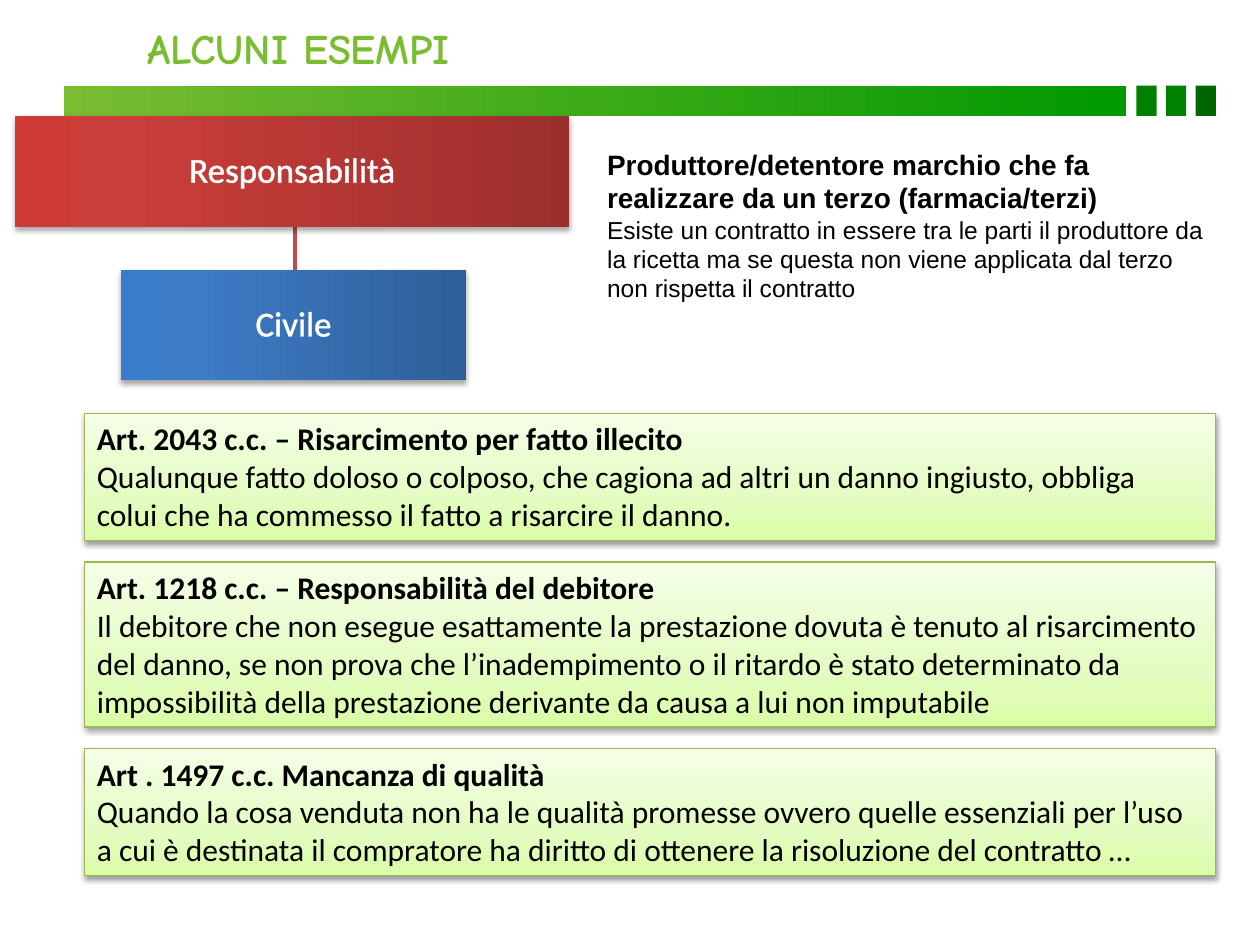
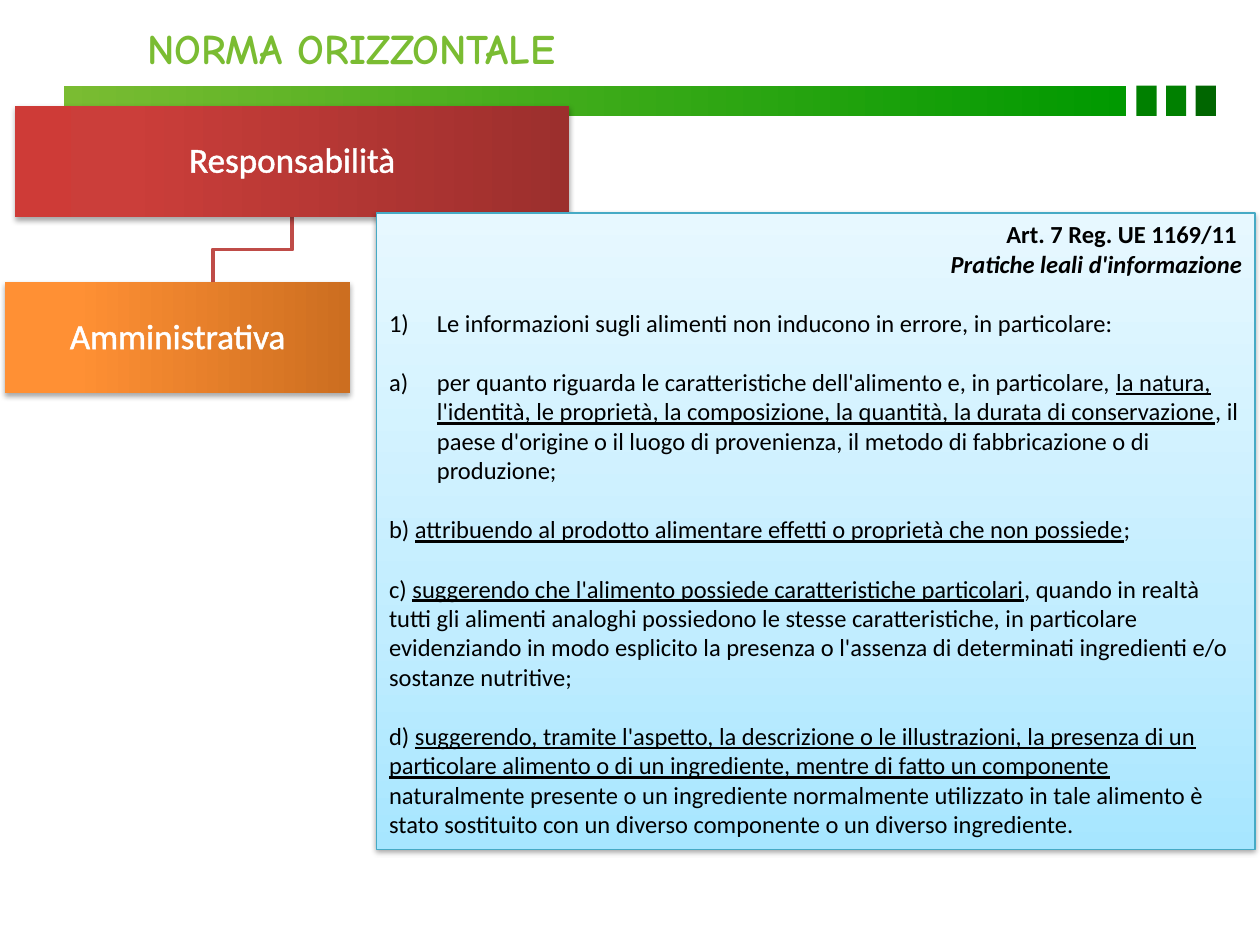
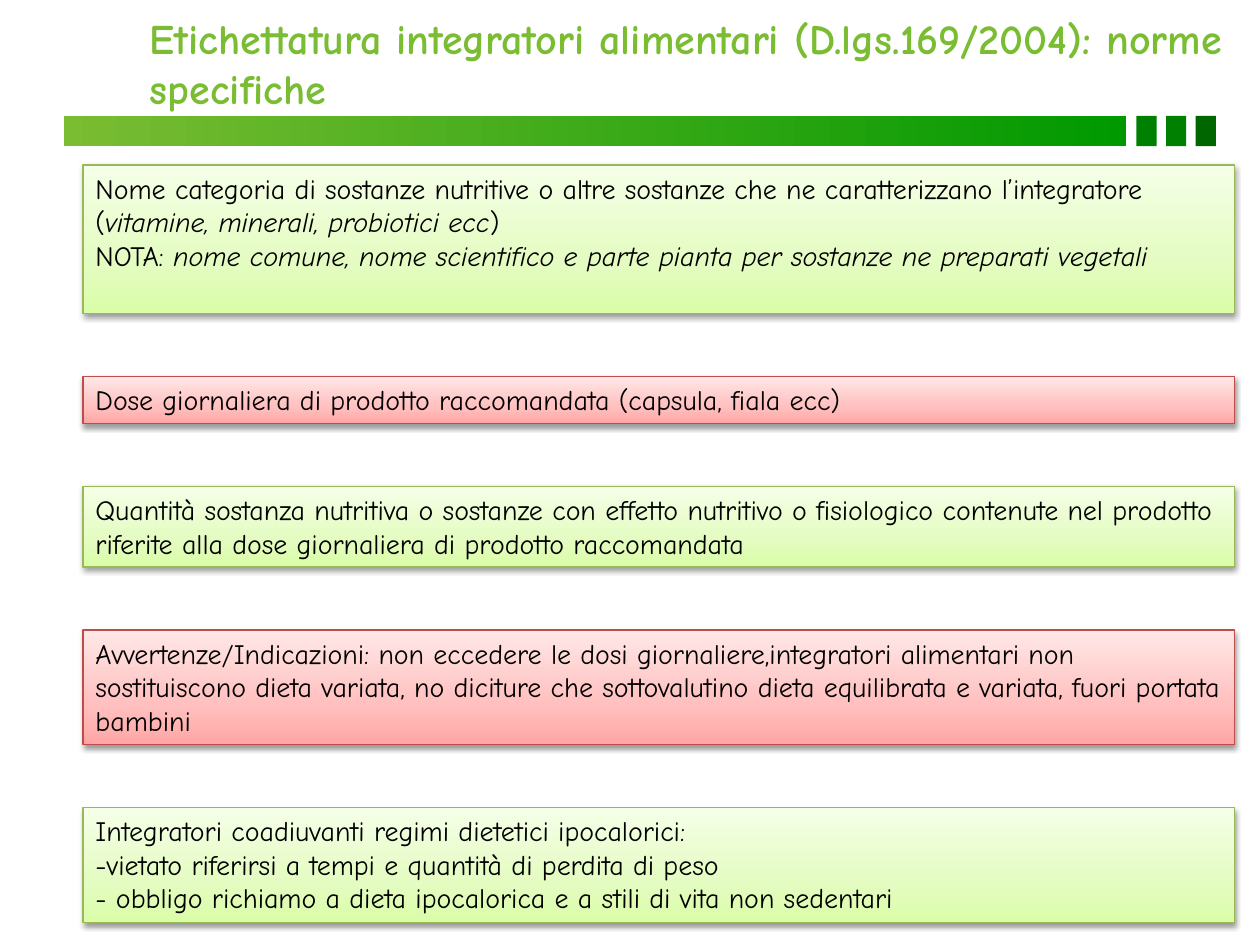
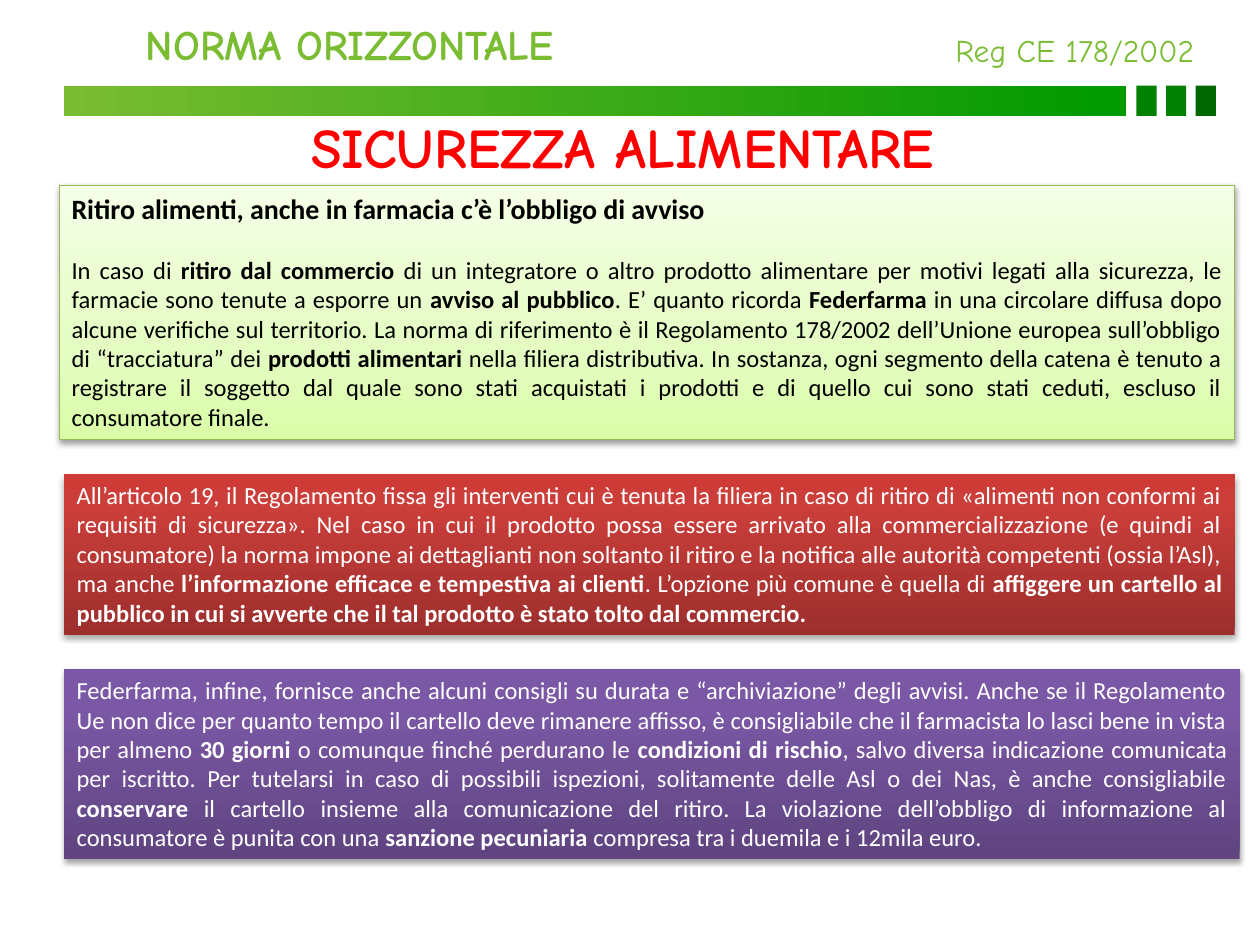
"""Builds four slides on food law: liability, fair information, supplement labels and food safety."""
from dataclasses import dataclass

from lxml.etree import SubElement
from pptx import Presentation
from pptx.dml.color import RGBColor
from pptx.enum.shapes import MSO_CONNECTOR, MSO_SHAPE
from pptx.enum.text import MSO_ANCHOR, MSO_AUTO_SIZE, PP_ALIGN
from pptx.oxml.ns import qn
from pptx.util import Inches, Pt

LIME = RGBColor(0x7A, 0xBC, 0x32)
GREEN = RGBColor(0x00, 0x99, 0x00)
MID_GREEN = RGBColor(0x00, 0x80, 0x00)
DARK_GREEN = RGBColor(0x00, 0x66, 0x00)
OLIVE = RGBColor(0x98, 0xB9, 0x55)
BRICK = RGBColor(0xBF, 0x4C, 0x48)
TEAL = RGBColor(0x46, 0xAA, 0xC5)
RED = RGBColor(0xFF, 0x00, 0x00)
BLACK = RGBColor(0x00, 0x00, 0x00)
WHITE = RGBColor(0xFF, 0xFF, 0xFF)

COMIC, CALIBRI, ARIAL = "Comic Neue", "Calibri", "Arial"
UPWARD, LEFTWARD, RIGHTWARD = 90, 180, 0
BLANK_LINE = 17
MARKS = {"*": "bold", "~": "italic", "_": "underline"}


@dataclass
class Theme:
    """Fill stops, outline, text colour and shadow of a panel."""
    stops: tuple
    line: RGBColor = None
    text: RGBColor = WHITE
    shadow_alpha: int = 35
    shadow_distance: float = 1.8


def pale(stops, line):
    return Theme(stops, line, BLACK, 38, 1.6)


PALE_GREEN = pale(((0, "DAFDA7"), (35, "E4FCC2"), (100, "F5FFE7")), OLIVE)
PALE_RED = pale(((0, "FFA6A5"), (35, "FFC0BF"), (100, "FFE7E7")), BRICK)
PALE_BLUE = pale(((0, "A7E6FF"), (35, "C1EDFF"), (100, "E7F8FF")), TEAL)
DEEP_RED = Theme(((0, "9C2F2D"), (80, "CB3E3A"), (100, "CE3B37")))
DEEP_BLUE = Theme(((0, "2F5F99"), (80, "3D7CC7"), (100, "3A7CCB")))
DEEP_ORANGE = Theme(((0, "CC6E20"), (80, "FF9034"), (100, "FF9136")))
DEEP_PURPLE = Theme(((0, "5F4480"), (80, "7B58A6"), (100, "7C57A8")))


@dataclass
class Para:
    """One paragraph; * marks bold, ~ italic and _ underlined words."""
    text: str
    size: float
    align: PP_ALIGN = PP_ALIGN.LEFT
    gap: float = 0
    numbering: str = None


LIABILITY_ARTICLES = [
    (1.01, "Art. 2043 c.c. – Risarcimento per fatto illecito",
     "Qualunque fatto doloso o colposo, che cagiona ad altri un danno ingiusto, obbliga colui che ha "
     "commesso il fatto a risarcire il danno."),
    (1.31, "Art. 1218 c.c. – Responsabilità del debitore",
     "Il debitore che non esegue esattamente la prestazione dovuta è tenuto al risarcimento del danno, "
     "se non prova che l’inadempimento o il ritardo è stato determinato da impossibilità della "
     "prestazione derivante da causa a lui non imputabile"),
    (1.01, "Art . 1497 c.c. Mancanza di qualità",
     "Quando la cosa venduta non ha le qualità promesse ovvero quelle essenziali per l’uso a cui è "
     "destinata il compratore ha diritto di ottenere la risoluzione del contratto …"),
]

PRODUCER_CASE = [
    Para("*Produttore/detentore marchio che fa realizzare da un terzo (farmacia/terzi)*", 16),
    Para("Esiste un contratto in essere tra le parti il produttore da la ricetta ma se questa non viene "
         "applicata dal terzo non rispetta il contratto", 14),
]

FAIR_INFORMATION = [
    Para("*Art. 7 Reg. UE 1169/11 *", 14, PP_ALIGN.RIGHT),
    Para("*~Pratiche leali d'informazione~*", 14, PP_ALIGN.RIGHT),
    Para("Le informazioni sugli alimenti non inducono in errore, in particolare:", 14,
         gap=BLANK_LINE, numbering="arabicParenR"),
    Para("per quanto riguarda le caratteristiche dell'alimento e, in particolare, _la natura, "
         "l'identità, le proprietà, la composizione, la quantità, la durata di conservazione_, il paese "
         "d'origine o il luogo di provenienza, il metodo di fabbricazione o di produzione;", 14,
         gap=BLANK_LINE, numbering="alphaLcParenR"),
    Para("b) _attribuendo al prodotto alimentare effetti o proprietà che non possiede_;", 14,
         gap=BLANK_LINE),
    Para("c) _suggerendo che l'alimento possiede caratteristiche particolari_, quando in realtà tutti "
         "gli alimenti analoghi possiedono le stesse caratteristiche, in particolare evidenziando in "
         "modo esplicito la presenza o l'assenza di determinati ingredienti e/o sostanze nutritive;", 14,
         gap=BLANK_LINE),
    Para("d) _suggerendo, tramite l'aspetto, la descrizione o le illustrazioni, la presenza di un "
         "particolare alimento o di un ingrediente, mentre di fatto un componente _naturalmente "
         "presente o un ingrediente normalmente utilizzato in tale alimento è stato sostituito con un "
         "diverso componente o un diverso ingrediente.", 14, gap=BLANK_LINE),
]

LABEL_RULES = [
    (PALE_GREEN, 1.18, [
        "Nome categoria di sostanze nutritive o altre sostanze che ne caratterizzano l’integratore "
        "(~vitamine, minerali, probiotici ecc~)",
        "NOTA: ~nome comune, nome scientifico e parte pianta per sostanze ne preparati vegetali~"]),
    (PALE_RED, 0.37, ["Dose giornaliera di prodotto raccomandata (capsula, fiala ecc)"]),
    (PALE_GREEN, 0.64, [
        "Quantità sostanza nutritiva o sostanze con effetto nutritivo o fisiologico contenute nel "
        "prodotto riferite alla dose giornaliera di prodotto raccomandata"]),
    (PALE_RED, 0.91, [
        "Avvertenze/Indicazioni: non eccedere le dosi giornaliere,integratori alimentari non "
        "sostituiscono dieta variata, no diciture che sottovalutino dieta equilibrata e variata, fuori "
        "portata bambini"]),
    (PALE_GREEN, 0.91, [
        "Integratori coadiuvanti regimi dietetici ipocalorici:",
        "-vietato riferirsi a tempi e quantità di perdita di peso",
        "- obbligo richiamo a dieta ipocalorica e a stili di vita non sedentari"]),
]

RECALL_NOTICES = [
    (PALE_GREEN, 0.47, 9.33, 2.02, [
        Para("*Ritiro alimenti, anche in farmacia c’è l’obbligo di avviso*", 16, PP_ALIGN.JUSTIFY),
        Para("In caso di *ritiro dal commercio* di un integratore o altro prodotto alimentare per motivi "
             "legati alla sicurezza, le farmacie sono tenute a esporre un *avviso al pubblico*. E’ quanto "
             "ricorda *Federfarma* in una circolare diffusa dopo alcune verifiche sul territorio. La "
             "norma di riferimento è il Regolamento 178/2002 dell’Unione europea sull’obbligo di "
             "“tracciatura” dei *prodotti alimentari* nella filiera distributiva. In sostanza, ogni "
             "segmento della catena è tenuto a registrare il soggetto dal quale sono stati acquistati i "
             "prodotti e di quello cui sono stati ceduti, escluso il consumatore finale.",
             14, PP_ALIGN.JUSTIFY, BLANK_LINE)]),
    (DEEP_RED, 0.51, 9.29, 1.28, [
        Para("All’articolo 19, il Regolamento fissa gli interventi cui è tenuta la filiera in caso di "
             "ritiro di «alimenti non conformi ai requisiti di sicurezza». Nel caso in cui il prodotto "
             "possa essere arrivato alla commercializzazione (e quindi al consumatore) la norma impone ai "
             "dettaglianti non soltanto il ritiro e la notifica alle autorità competenti (ossia l’Asl), "
             "ma anche *l’informazione efficace e tempestiva ai clienti*. L’opzione più comune è quella "
             "di *affiggere un cartello al pubblico in cui si avverte che il tal prodotto è stato tolto "
             "dal commercio.*", 14, PP_ALIGN.JUSTIFY)]),
    (DEEP_PURPLE, 0.51, 9.33, 1.51, [
        Para("Federfarma, infine, fornisce anche alcuni consigli su durata e “archiviazione” degli "
             "avvisi. Anche se il Regolamento Ue non dice per quanto tempo il cartello deve rimanere "
             "affisso, è consigliabile che il farmacista lo lasci bene in vista per almeno *30 giorni* o "
             "comunque finché perdurano le *condizioni di rischio*, salvo diversa indicazione comunicata "
             "per iscritto. Per tutelarsi in caso di possibili ispezioni, solitamente delle Asl o dei "
             "Nas, è anche consigliabile *conservare* il cartello insieme alla comunicazione del ritiro. "
             "La violazione dell’obbligo di informazione al consumatore è punita con una *sanzione "
             "pecuniaria* compresa tra i duemila e i 12mila euro.", 14, PP_ALIGN.JUSTIFY)]),
]


def inches(*lengths):
    return [Inches(length) for length in lengths]


def split_marks(text):
    active, piece = set(), ""
    for char in text:
        if char in MARKS:
            if piece:
                yield piece, set(active)
            active ^= {MARKS[char]}
            piece = ""
        else:
            piece += char
    if piece:
        yield piece, active


def write(frame, paras, font, color):
    for index, para in enumerate(paras):
        paragraph = frame.paragraphs[0] if index == 0 else frame.add_paragraph()
        paragraph.alignment = para.align
        if para.gap:
            paragraph.space_before = Pt(para.gap)
        if para.numbering:
            properties = paragraph._p.get_or_add_pPr()
            properties.set("marL", str(Inches(0.38)))
            properties.set("indent", str(Inches(-0.38)))
            SubElement(properties, qn("a:buAutoNum"), type=para.numbering)
        for piece, styles in split_marks(para.text):
            run = paragraph.add_run()
            run.text = piece
            run.font.name, run.font.size = font, Pt(para.size)
            run.font.color.rgb = color
            for style in styles:
                setattr(run.font, style, True)


def set_gradient(shape, stops, angle):
    shape.fill.gradient()
    shape.fill.gradient_angle = angle
    stop_list = shape._element.spPr.find(".//" + qn("a:gsLst"))
    for stop in list(stop_list):
        stop_list.remove(stop)
    for position, color in stops:
        stop = SubElement(stop_list, qn("a:gs"), pos=str(position * 1000))
        SubElement(stop, qn("a:srgbClr"), val=str(color))


def add_block(slide, box):
    block = slide.shapes.add_shape(MSO_SHAPE.RECTANGLE, *inches(*box))
    block.shadow.inherit = False
    block.line.fill.background()
    return block


def add_panel(slide, theme, box, paras, font=CALIBRI, angle=UPWARD):
    panel = add_block(slide, box)
    set_gradient(panel, theme.stops, angle)
    if theme.line:
        panel.line.color.rgb = theme.line
        panel.line.width = Pt(0.75)
    effects = panel._element.spPr.find(qn("a:effectLst"))
    shadow = SubElement(effects, qn("a:outerShdw"), blurRad=str(Pt(3.1)),
                        dist=str(Pt(theme.shadow_distance)), dir="5400000", rotWithShape="0")
    shade = SubElement(shadow, qn("a:srgbClr"), val="000000")
    SubElement(shade, qn("a:alpha"), val=str(theme.shadow_alpha * 1000))
    panel.text_frame.word_wrap = True
    panel.text_frame.vertical_anchor = MSO_ANCHOR.TOP
    write(panel.text_frame, paras, font, theme.text)
    return panel


def add_node(slide, theme, box, label):
    node = add_panel(slide, theme, box, [Para(label, 20, PP_ALIGN.CENTER)], angle=LEFTWARD)
    frame = node.text_frame
    frame.vertical_anchor = MSO_ANCHOR.MIDDLE
    frame.margin_left = frame.margin_right = frame.margin_top = frame.margin_bottom = Inches(0.03)
    frame.paragraphs[0].line_spacing = 0.9
    properties = frame.paragraphs[0].runs[0]._r.get_or_add_rPr()
    outline = SubElement(properties, qn("a:ln"), w=str(Pt(1.45)))
    SubElement(SubElement(outline, qn("a:solidFill")), qn("a:srgbClr"), val=str(WHITE))
    properties.insert(0, outline)


def add_link(slide, points):
    corners = [tuple(inches(*point)) for point in points]
    if len(corners) == 2:
        link = slide.shapes.add_connector(MSO_CONNECTOR.STRAIGHT, *corners[0], *corners[1])
        SubElement(link._element.spPr, qn("a:effectLst"))
    else:
        builder = slide.shapes.build_freeform(*corners[0])
        builder.add_line_segments(corners[1:], close=False)
        link = builder.convert_to_shape()
        link.shadow.inherit = False
        link.fill.background()
    link.line.color.rgb = BRICK
    link.line.width = Pt(2.25)


def add_text(slide, box, paras, font=COMIC, color=LIME, wrap=True):
    frame = slide.shapes.add_textbox(*inches(*box)).text_frame
    frame.word_wrap = wrap
    frame.auto_size = MSO_AUTO_SIZE.SHAPE_TO_FIT_TEXT
    write(frame, paras, font, color)


def add_titled_slide(deck, title, box, band_top=0.68, wrap=False):
    slide = deck.slides.add_slide(deck.slide_layouts[6])
    add_text(slide, box, [Para(f"*{title}*", 24)], wrap=wrap)
    band = add_block(slide, (0.51, band_top, 8.43, 0.24))
    set_gradient(band, ((0, LIME), (100, GREEN)), RIGHTWARD)
    for index, color in enumerate((MID_GREEN, MID_GREEN, DARK_GREEN)):
        square = add_block(slide, (9.02 + index * 0.235, band_top, 0.16, 0.24))
        square.fill.solid()
        square.fill.fore_color.rgb = color
    return slide


def stack_panels(slide, top, gap, panels, font=CALIBRI):
    for theme, left, width, height, paras in panels:
        add_panel(slide, theme, (left, top, width, height), paras, font)
        top += height + gap


def build_liability(deck):
    slide = add_titled_slide(deck, "ALCUNI ESEMPI", (1.07, 0.13, 3.01, 0.5))
    add_link(slide, [(2.34, 1.79), (2.34, 2.14)])
    add_node(slide, DEEP_RED, (0.12, 0.92, 4.4, 0.88), "Responsabilità")
    add_node(slide, DEEP_BLUE, (0.96, 2.14, 2.74, 0.88), "Civile")
    add_text(slide, (4.72, 1.12, 5, 1.35), PRODUCER_CASE, ARIAL, BLACK)
    stack_panels(slide, 3.28, 0.17, [
        (PALE_GREEN, 0.67, 8.98, height, [Para(f"*{heading}*", 18), Para(body, 18)])
        for height, heading, body in LIABILITY_ARTICLES])


def build_fair_information(deck):
    slide = add_titled_slide(deck, "NORMA ORIZZONTALE", (1.07, 0.13, 4.16, 0.5))
    add_link(slide, [(2.32, 1.72), (2.32, 1.98), (1.69, 1.98), (1.69, 2.24)])
    add_node(slide, DEEP_RED, (0.12, 0.84, 4.4, 0.88), "Responsabilità")
    add_node(slide, DEEP_ORANGE, (0.04, 2.24, 2.74, 0.88), "Amministrativa")
    add_panel(slide, PALE_BLUE, (2.99, 1.69, 6.97, 5.05), FAIR_INFORMATION)


def build_labels(deck):
    slide = add_titled_slide(
        deck, "Etichettatura integratori alimentari (D.lgs.169/2004): norme specifiche",
        (1.09, 0.05, 9.35, 0.91), band_top=0.92, wrap=True)
    stack_panels(slide, 1.31, 0.5, [
        (theme, 0.66, 9.14, height, [Para(text, 16) for text in texts])
        for theme, height, texts in LABEL_RULES], COMIC)


def build_food_safety(deck):
    slide = add_titled_slide(deck, "NORMA ORIZZONTALE", (1.06, 0.1, 4.16, 0.5))
    add_text(slide, (7.4, 0.2, 2.26, 0.4), [Para("Reg CE 178/2002", 18, PP_ALIGN.CENTER)], wrap=False)
    add_text(slide, (0.24, 0.84, 9.41, 0.63), [Para("*SICUREZZA ALIMENTARE*", 32, PP_ALIGN.CENTER)],
             color=RED)
    stack_panels(slide, 1.47, 0.27, RECALL_NOTICES)


def main():
    deck = Presentation()
    deck.slide_width, deck.slide_height = inches(10, 7.5)
    for build in (build_liability, build_fair_information, build_labels, build_food_safety):
        build(deck)
    deck.save("out.pptx")


if __name__ == "__main__":
    main()
